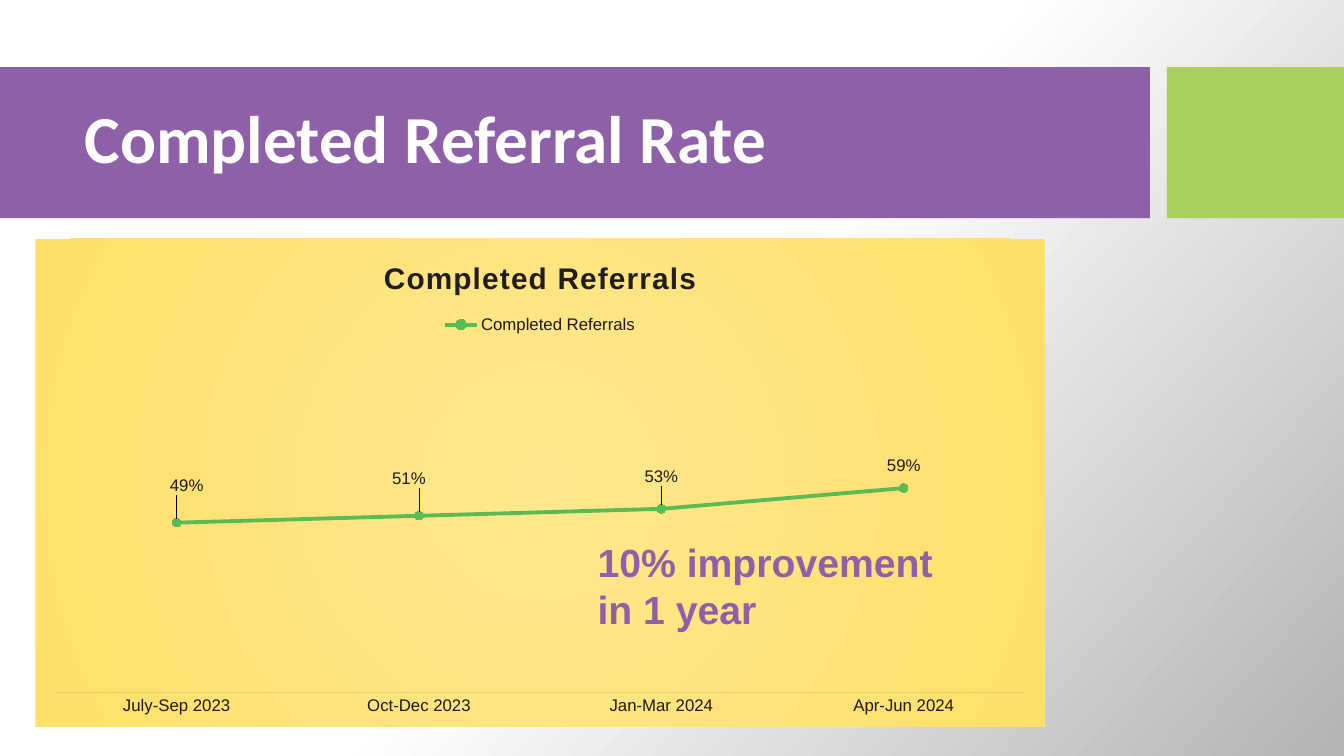
import pptx
import pptx.chart.data
import pptx.dml.color
import pptx.enum.chart
import pptx.enum.text
import pptx.oxml
import pptx.oxml.ns
import pptx.util
from pptx.util import Cm, Pt

RGBColor = pptx.dml.color.RGBColor
PURPLE = RGBColor(0x8D, 0x60, 0xA8)
LIME = RGBColor(0xA7, 0xD0, 0x5E)
GREEN = RGBColor(0x5B, 0xBA, 0x54)
INK = RGBColor(0x1E, 0x1A, 0x1B)
TITLE_INK = RGBColor(0x21, 0x1D, 0x1E)
WHITE = RGBColor(0xFF, 0xFF, 0xFF)
SILVER = RGBColor(0xB3, 0xB3, 0xB3)
PALE_YELLOW = RGBColor(0xFF, 0xE7, 0x8D)
YELLOW = RGBColor(0xFF, 0xE0, 0x6A)

# Content
HEADING = "Completed Referral Rate"
CALLOUT = "10% improvement in 1 year"
CHART_TITLE = "Completed Referrals"
SERIES_NAME = "Completed Referrals"
RATES = {
    "July-Sep 2023": 0.49,
    "Oct-Dec 2023": 0.51,
    "Jan-Mar 2024": 0.53,
    "Apr-Jun 2024": 0.59,
}
# Label shifts as fractions of the chart's width and height
LABEL_SHIFTS = [(0.01, -0.04), (-0.01, -0.04), (0, -0.03), (0, -0.01)]
# Left and width of the bars that share one band
BAND_TOP, BAND_HEIGHT = Cm(1.69), Cm(3.81)
BARS = [(Cm(0), Cm(28.98), PURPLE), (Cm(29.41), Cm(4.46), LIME)]
PLOT_LAYOUT = {"x": 0.02, "y": 0.22, "w": 0.96, "h": 0.71}


def xml(markup):
    namespaces = pptx.oxml.ns.nsdecls("a", "c")
    tag, rest = markup[1:].split(">", 1)
    return pptx.oxml.parse_xml(f"<{tag} {namespaces}>{rest}")


def gradient(stops, direction):
    colours = "".join(
        f'<a:gs pos="{position * 1000}"><a:srgbClr val="{colour}"/></a:gs>'
        for position, colour in stops
    )
    return f"<a:gradFill><a:gsLst>{colours}</a:gsLst>{direction}</a:gradFill>"


def manual_layout(values, inner=False):
    target = '<c:layoutTarget val="inner"/>' if inner else ""
    modes = '<c:xMode val="edge"/><c:yMode val="edge"/>' if inner else ""
    numbers = "".join(f'<c:{key} val="{value}"/>' for key, value in values.items())
    return xml(f"<c:layout><c:manualLayout>{target}{modes}{numbers}</c:manualLayout></c:layout>")


def style_font(font, size, colour, name="Arial", bold=False):
    font.size, font.name, font.bold = Pt(size), name, bold
    font.color.rgb = colour


def write_text(frame, text, line_spacing=None, **style):
    frame.word_wrap = True
    paragraph = frame.paragraphs[0]
    paragraph.alignment = pptx.enum.text.PP_ALIGN.LEFT
    paragraph.line_spacing = line_spacing
    run = paragraph.add_run()
    run.text = text
    style_font(run.font, **style)
    return run


def build_chart(slide):
    data = pptx.chart.data.CategoryChartData(number_format="0%")
    data.categories = list(RATES)
    data.add_series(SERIES_NAME, list(RATES.values()))
    chart = slide.shapes.add_chart(
        pptx.enum.chart.XL_CHART_TYPE.LINE_MARKERS,
        Cm(0.89), Cm(6.02), Cm(25.45), Cm(12.29), data,
    ).chart
    style_font(chart.font, 12, INK)

    # Yellow glow behind the chart
    centre = '<a:path path="circle"><a:fillToRect l="50000" t="50000" r="50000" b="50000"/></a:path>'
    glow = gradient([(0, PALE_YELLOW), (100, YELLOW)], centre)
    chart.element.find(pptx.oxml.ns.qn("c:chart")).addnext(
        xml(f"<c:spPr>{glow}<a:ln><a:noFill/></a:ln></c:spPr>")
    )

    # Title and legend
    run = write_text(chart.chart_title.text_frame, CHART_TITLE,
                     size=21.3, colour=TITLE_INK, bold=True)
    run.font._element.set("spc", "100")
    chart.chart_title.text_frame.paragraphs[0].alignment = pptx.enum.text.PP_ALIGN.CENTER
    chart.chart_title.include_in_layout = False
    chart.has_legend = True
    chart.legend.position = pptx.enum.chart.XL_LEGEND_POSITION.TOP
    chart.legend.include_in_layout = False
    style_font(chart.legend.font, 12, INK)

    # Axes
    rate_axis, quarter_axis = chart.value_axis, chart.category_axis
    rate_axis.minimum_scale, rate_axis.maximum_scale = 0, 1
    rate_axis.has_major_gridlines = False
    rate_axis.visible = False
    quarter_axis.major_tick_mark = pptx.enum.chart.XL_TICK_MARK.NONE
    style_font(quarter_axis.tick_labels.font, 12, INK)
    axis_line = quarter_axis.format.line
    axis_line.width = Pt(0.75)
    axis_line.color.rgb = TITLE_INK
    colour_element = quarter_axis._element.find(
        f"{pptx.oxml.ns.qn('c:spPr')}//{pptx.oxml.ns.qn('a:srgbClr')}")
    colour_element.append(xml('<a:alpha val="10000"></a:alpha>'))

    # Plot area
    plot_area = chart.element.find(f".//{pptx.oxml.ns.qn('c:plotArea')}")
    for layout in plot_area.findall(pptx.oxml.ns.qn("c:layout")):
        plot_area.remove(layout)
    plot_area.insert(0, manual_layout(PLOT_LAYOUT, inner=True))

    # Line, markers and labels
    chart.plots[0].vary_by_categories = False
    series = chart.plots[0].series[0]
    series.smooth = False
    series.format.line.width = Pt(2.75)
    series.format.line.color.rgb = GREEN
    series.marker.style = pptx.enum.chart.XL_MARKER_STYLE.CIRCLE
    series.marker.size = 6
    series.marker.format.fill.solid()
    series.marker.format.fill.fore_color.rgb = GREEN
    series.marker.format.line.color.rgb = GREEN
    labels = series.data_labels
    labels.show_value = True
    labels.number_format, labels.number_format_is_linked = "0%", False
    labels.position = pptx.enum.chart.XL_LABEL_POSITION.ABOVE
    style_font(labels.font, 12, INK)
    for index, (x, y) in enumerate(LABEL_SHIFTS):
        label = series.points[index].data_label
        style_font(label.font, 12, INK)
        label.position = pptx.enum.chart.XL_LABEL_POSITION.ABOVE
    label_elements = labels._element.findall(pptx.oxml.ns.qn("c:dLbl"))
    for element, (x, y) in zip(label_elements, LABEL_SHIFTS):
        element.insert(1, manual_layout({"x": x, "y": y}))


def main():
    presentation = pptx.Presentation()
    presentation.slide_width, presentation.slide_height = Cm(33.87), Cm(19.05)
    slide = presentation.slides.add_slide(presentation.slide_layouts[5])

    # Background
    slide.background.fill.gradient()
    default_fill = slide.element.find(f".//{pptx.oxml.ns.qn('a:gradFill')}")
    backdrop = gradient([(0, WHITE), (50, WHITE), (100, SILVER)],
                        '<a:lin ang="2520000" scaled="0"/>')
    default_fill.getparent().replace(default_fill, xml(backdrop))

    # Heading band
    title = slide.shapes.title
    for left, width, colour in BARS:
        bar = slide.shapes.add_shape(1, left, BAND_TOP, width, BAND_HEIGHT)
        bar.shadow.inherit = False
        bar.fill.solid()
        bar.fill.fore_color.rgb = colour
        bar.line.fill.background()
        title._element.addprevious(bar._element)
    title.left, title.top, title.width, title.height = Cm(1.88), Cm(2.08), Cm(28.53), Cm(3)
    title.text_frame.vertical_anchor = pptx.enum.text.MSO_ANCHOR.MIDDLE
    write_text(title.text_frame, HEADING, line_spacing=0.9,
               size=48, colour=WHITE, name="Calibri", bold=True)

    build_chart(slide)

    # Callout
    callout = slide.shapes.add_textbox(Cm(14.81), Cm(13.44), Cm(9.27), Cm(2.64))
    write_text(callout.text_frame, CALLOUT, size=28, colour=PURPLE, bold=True)

    presentation.save("out.pptx")


if __name__ == "__main__":
    main()
